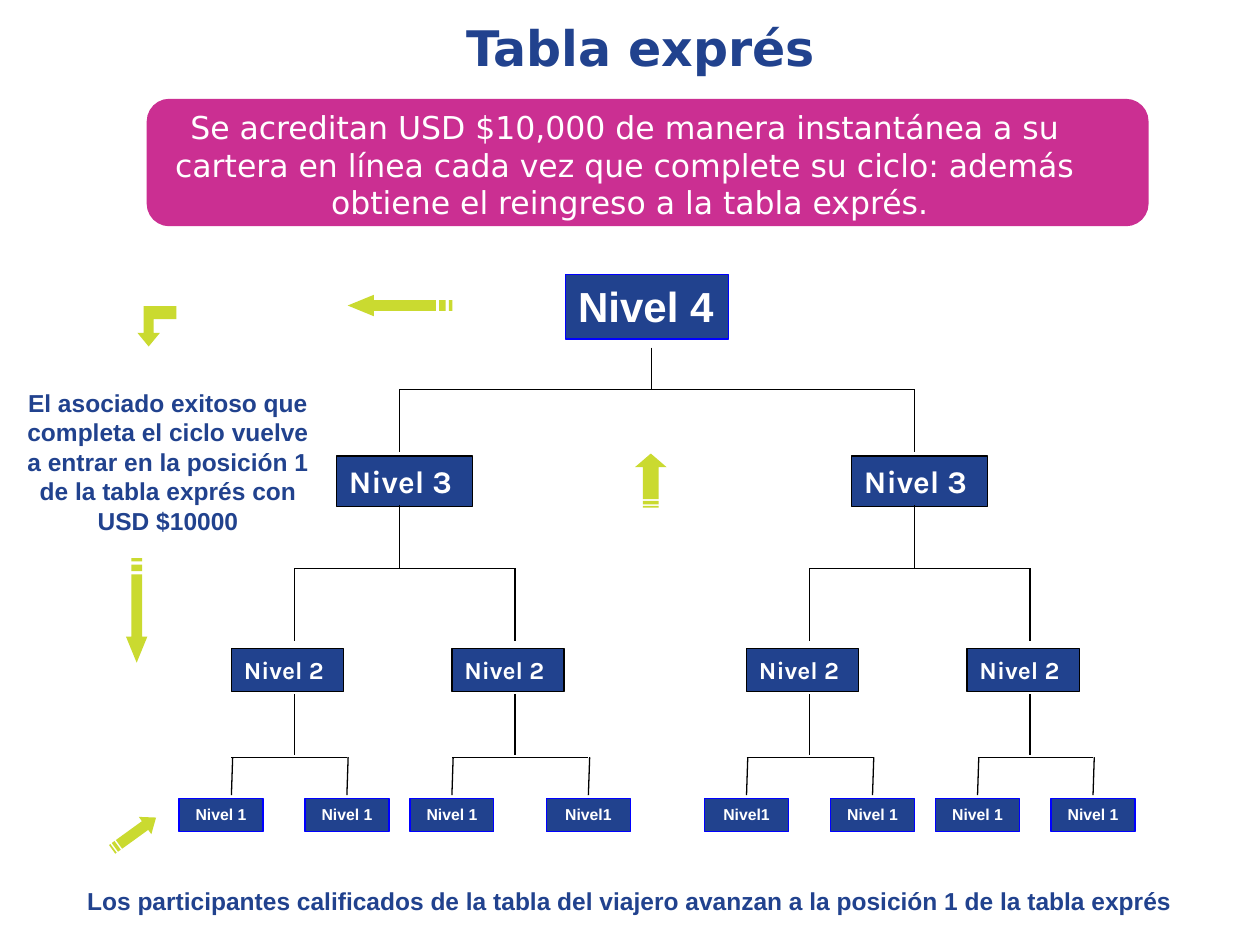
from dataclasses import dataclass
from math import cos, radians, sin

from lxml.etree import SubElement
from pptx import Presentation
from pptx.dml.color import RGBColor
from pptx.enum.shapes import MSO_CONNECTOR as Link, MSO_SHAPE as Shape
from pptx.enum.text import MSO_ANCHOR as Anchor, MSO_AUTO_SIZE as Fit, PP_ALIGN as Align
from pptx.oxml.ns import qn
from pptx.util import Inches, Pt

COLUMNS, ROWS = 120, 90
UNIT = Inches(10) / COLUMNS
COLORS = {
    "navy": "21428E",
    "pink": "CB2F92",
    "lime": "CADA30",
    "blue": "0000FF",
    "black": "000000",
    "white": "FFFFFF",
}


@dataclass
class Box:
    """Region of the page in grid columns and rows."""

    left: float
    top: float
    width: float
    height: float

    def inner(self, left, top, width, height):
        """Return a box offset from this one's corner."""
        return Box(self.left + left, self.top + top, width, height)

    def lengths(self):
        """Return left, top, width and height in slide units."""
        return [round(n * UNIT) for n in (self.left, self.top, self.width, self.height)]


@dataclass
class Style:
    """Look of a text."""

    size: int
    font: str = "Arial"
    color: str = "navy"
    bold: bool = True
    align: Align = Align.CENTER
    wrap: bool = True
    anchor: Anchor = Anchor.TOP


def color(name):
    """Return a named colour."""
    return RGBColor.from_string(COLORS[name])


def write(shape, lines, style):
    """Fill a shape with one paragraph per line."""
    frame = shape.text_frame
    frame.word_wrap = style.wrap
    frame.auto_size = Fit.SHAPE_TO_FIT_TEXT
    frame.vertical_anchor = style.anchor
    for index, line in enumerate(lines):
        para = frame.add_paragraph() if index else frame.paragraphs[0]
        para.alignment = style.align
        span = para.add_run()
        span.text = line
        font = span.font
        font.name, font.size, font.bold = style.font, Pt(style.size), style.bold
        font.color.rgb = color(style.color)


def paint(shape, fill, border=None, weight=0.75):
    """Give a shape a flat fill and an optional border."""
    shape.shadow.inherit = False
    shape.fill.solid()
    shape.fill.fore_color.rgb = color(fill)
    if border:
        shape.line.color.rgb = color(border)
        shape.line.width = Pt(weight)
    else:
        shape.line.fill.background()


def caption(page, box, lines, style):
    """Place a text box."""
    write(page.shapes.add_textbox(*box.lengths()), lines, style)


def node(page, box, label, border, style):
    """Place one labelled level of the tree."""
    shape = page.shapes.add_shape(Shape.RECTANGLE, *box.lengths())
    paint(shape, "navy", border)
    write(shape, [label], style)


def rule(page, box, start, end):
    """Draw a tree line between two points of a box."""
    ends = [round(n * UNIT) for x, y in (start, end) for n in (box.left + x, box.top + y)]
    line = page.shapes.add_connector(Link.STRAIGHT, *ends)
    line.line.color.rgb = color("black")
    line.line.width = Pt(0.75)
    SubElement(line._element.spPr, qn("a:effectLst"))


def outline(page, box, contours, angle=0):
    """Draw lime contours, given as shares of a box, turned about its centre."""
    turn = radians(angle)

    def spot(point):
        """Turn one point into slide units."""
        x, y = (point[0] - 0.5) * box.width, (point[1] - 0.5) * box.height
        across = box.left + box.width / 2 + x * cos(turn) - y * sin(turn)
        down = box.top + box.height / 2 + x * sin(turn) + y * cos(turn)
        return round(across * UNIT), round(down * UNIT)

    pen = None
    for contour in contours:
        first, *rest = map(spot, contour)
        if pen:
            pen.move_to(*first)
        else:
            pen = page.shapes.build_freeform(*first)
        pen.add_line_segments(rest, close=True)
    paint(pen.convert_to_shape(), "lime")


def striped_arrow(page, box, angle):
    """Draw an arrow with two stripes at its tail."""
    bars = [[(a / 32, 0.25), (b / 32, 0.25), (b / 32, 0.75), (a / 32, 0.75)] for a, b in ((0, 1), (2, 4))]
    body = [(5 / 32, 0.25), (0.75, 0.25), (0.75, 0), (1, 0.5), (0.75, 1), (0.75, 0.75), (5 / 32, 0.75)]
    outline(page, box, [body, *bars], angle)


def elbow_arrow(page, box):
    """Draw an arrow that turns downwards."""
    points = [(0.29, 1), (0.58, 0.66), (0.42, 0.66), (0.42, 0.32), (1, 0.32),
              (1, 0), (0.16, 0), (0.16, 0.66), (0, 0.66)]
    outline(page, box, [points])


def half_tree(page, box, leaves, drops):
    """Draw levels three to one below one side of the top node."""
    third = Style(18, "Karla", "white", align=Align.LEFT, wrap=False)
    second = Style(14, "Karla", "white", align=Align.LEFT, wrap=False)
    rule(page, box, (21, 0), (21, 6))
    node(page, box.inner(15, 6.36, 12.96, 4.8), "Nivel 3", "black", third)
    rule(page, box, (21, 11.04), (21, 17.04))
    rule(page, box, (11, 17.04), (32, 17.04))
    for index, left in enumerate((5, 26)):
        stem = left + 6
        rule(page, box, (stem, 17.04), (stem, 24))
        node(page, box.inner(left, 24.72, 10.68, 4.08), "Nivel 2", "black", second)
        rule(page, box, (stem, 29.04), (stem, 34.8))
        pair = drops[2 * index:2 * index + 2]
        rule(page, box, (pair[0], 35.04), (pair[1], 35.04))
        for drop in pair:
            rule(page, box, (drop + 0.12, 35.04), (drop, 38.64))
    for left, label in leaves:
        node(page, box.inner(left, 39, 8, 3.12), label, "blue", Style(9, color="white"))


def tree(page, box):
    """Draw the whole tree of levels."""
    top = Style(24, color="white", align=Align.LEFT, wrap=False)
    node(page, box.inner(36.84, 0, 15.48, 6.12), "Nivel 4", "blue", top)
    rule(page, box, (45, 6.96), (45, 10.92))
    rule(page, box, (21, 10.92), (70.06, 10.92))
    names = ["Nivel 1", "Nivel 1", "Nivel 1", "Nivel1"]
    for left, leaves, labels, drops in (
        (0, (0, 12, 22, 35), names, (5, 16, 26, 39)),
        (49.06, (1, 13, 23, 34), names[::-1], (5, 17, 27, 38)),
    ):
        half_tree(page, box.inner(left, 10.92, 49, 42.12), list(zip(leaves, labels)), drops)


def banner(page, box):
    """Place the rounded band with its message."""
    band = page.shapes.add_shape(Shape.FLOWCHART_ALTERNATE_PROCESS, *box.lengths())
    paint(band, "pink", "pink", 2.25)
    lines = ["Se acreditan USD $10,000 de manera instantánea a su ",
             "cartera en línea cada vez que complete su ciclo: además ",
             "obtiene el reingreso a la tabla exprés."]
    style = Style(18, "DejaVu Sans", "white", False, wrap=False, anchor=Anchor.MIDDLE)
    caption(page, box.inner(0.84, 0, 90, 12.12), lines, style)


def cycle(page, box):
    """Place the arrows and the note of the re-entry cycle."""
    for place, angle in (((33.12, 28.08, 9.96, 2.04), 180), ((59.4, 44.28, 5.16, 3), 270),
                         ((8.04, 57.12, 9.96, 2.04), 90), ((10.2, 78.36, 5.16, 2.04), 324.1)):
        striped_arrow(page, box.inner(*place), angle)
    elbow_arrow(page, box.inner(13.08, 29.16, 3.72, 3.84))
    note = ("El asociado exitoso que completa el ciclo vuelve a entrar en la "
            "posición 1 de la tabla exprés con USD $10000")
    caption(page, box.inner(1, 36.36, 30, 15.36), [note], Style(14))


def main():
    """Build the deck."""
    deck = Presentation()
    deck.slide_width, deck.slide_height = round(COLUMNS * UNIT), round(ROWS * UNIT)
    page = deck.slides.add_slide(deck.slide_layouts[6])
    whole = Box(0, 0, COLUMNS, ROWS)
    banner(page, whole.inner(14.16, 9.6, 95.04, 11.76))
    caption(page, whole.inner(1, 1.08, COLUMNS, 6.84), ["Tabla exprés"], Style(28, "DejaVu Sans"))
    tree(page, whole.inner(17.04, 26.16, 98, 53.04))
    cycle(page, whole)
    footer = "Los participantes calificados de la tabla del viajero avanzan a la posición 1 de la tabla exprés"
    caption(page, whole.inner(0, 83.76, COLUMNS, 4.08), [footer], Style(14))
    deck.save("out.pptx")


if __name__ == "__main__":
    main()
